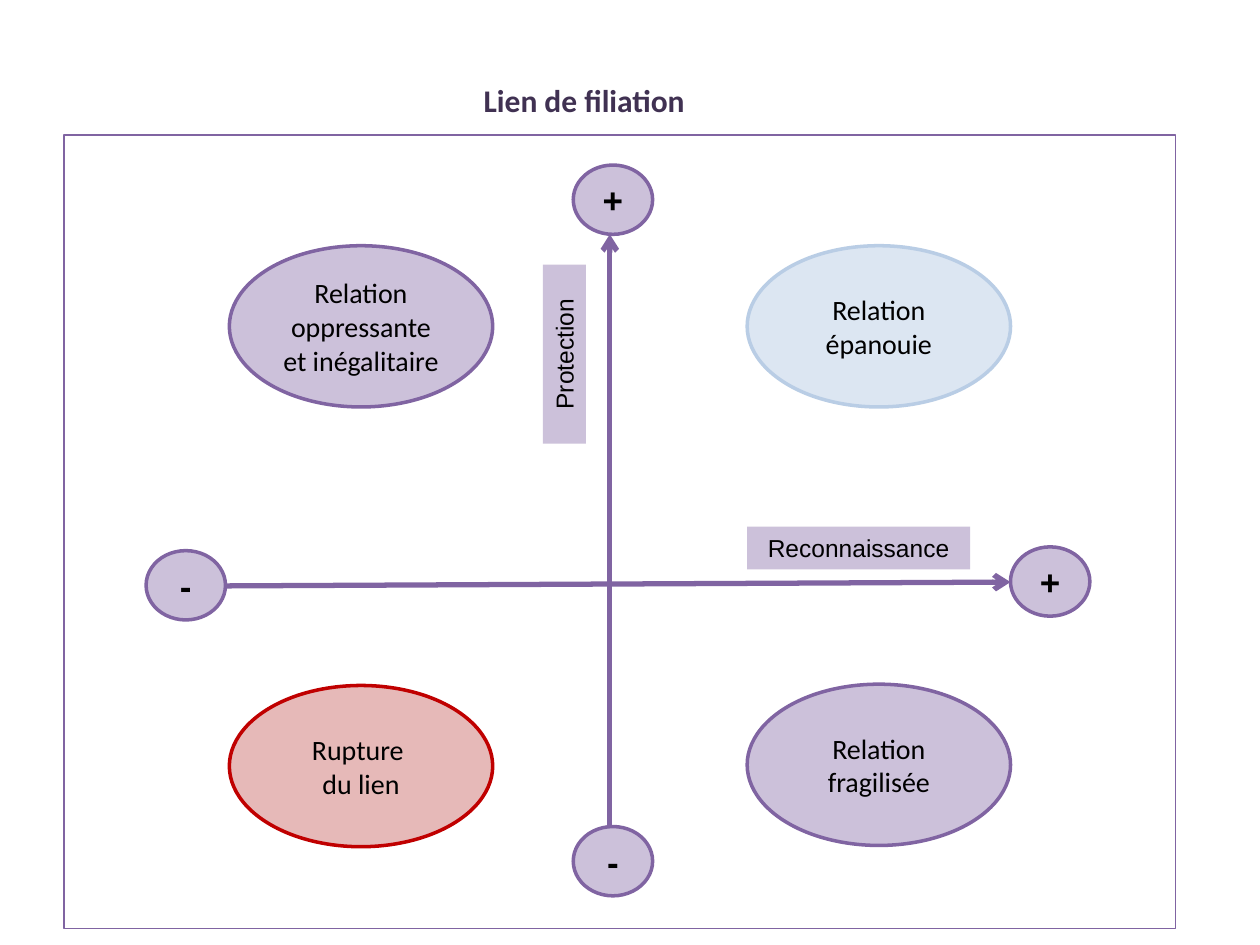
from lxml.etree import SubElement
from pptx import Presentation
from pptx.dml.color import RGBColor
from pptx.enum.shapes import MSO_CONNECTOR, MSO_SHAPE
from pptx.enum.text import MSO_ANCHOR, MSO_AUTO_SIZE, PP_ALIGN
from pptx.oxml.ns import qn
from pptx.util import Inches, Pt

HUES = {
    "ink": "000000", "title": "403152", "edge": "8064A2", "lilac": "CCC1DA",
    "sky": "DCE6F2", "blue": "B9CDE5", "rose": "E6B9B8", "red": "C00000",
}


def color(name):
    return RGBColor.from_string(HUES[name])


def write(shape, text, size=16, font="Calibri", hue="ink", bold=False,
          align=PP_ALIGN.CENTER, anchor=MSO_ANCHOR.MIDDLE, wrap=True, grow=False):
    frame = shape.text_frame
    frame.text = text
    frame.word_wrap = wrap
    frame.vertical_anchor = anchor
    frame.auto_size = MSO_AUTO_SIZE.SHAPE_TO_FIT_TEXT if grow else MSO_AUTO_SIZE.NONE
    for para in frame.paragraphs:
        para.alignment = align
        for run in para.runs:
            run.font.size = Pt(size)
            run.font.name = font
            run.font.bold = bold
            run.font.color.rgb = color(hue)


class Board:
    """Draws styled elements on the current slide."""

    def __init__(self, slide):
        self.shapes = slide.shapes
        self.edge = "edge"
        self.fill = "lilac"

    def shape(self, kind, box, fill=None, line=None, width=2):
        item = self.shapes.add_shape(kind, *map(Inches, box))
        item.shadow.inherit = False
        if fill:
            item.fill.solid()
            item.fill.fore_color.rgb = color(fill)
        else:
            item.fill.background()
        if line:
            item.line.color.rgb = color(line)
            item.line.width = Pt(width)
        else:
            item.line.fill.background()
        return item

    def axis(self, start, end):
        item = self.shapes.add_connector(
            MSO_CONNECTOR.STRAIGHT, *map(Inches, start + end))
        item.line.color.rgb = color(self.edge)
        item.line.width = Pt(3)
        SubElement(item.line._get_or_add_ln(), qn("a:tailEnd"), type="arrow")
        SubElement(item._element.spPr, qn("a:effectLst"))

    def label(self, text, box, turn=0):
        item = self.shape(MSO_SHAPE.RECTANGLE, box, self.fill)
        item.rotation = turn
        write(item, text, size=14, font="Arial", anchor=MSO_ANCHOR.TOP, grow=True)

    def sign(self, text, left, top):
        item = self.shape(MSO_SHAPE.OVAL, (left, top, 0.63, 0.55), self.fill, self.edge)
        write(item, text, size=20, font="Arial", bold=True)

    def bubble(self, text, left, top, fill=None, line=None):
        item = self.shape(MSO_SHAPE.OVAL, (left, top, 2.09, 1.28),
                          fill or self.fill, line or self.edge)
        write(item, text)

    def title(self, text, box):
        item = self.shapes.add_textbox(*map(Inches, box))
        write(item, text, size=18, hue="title", bold=True, align=PP_ALIGN.LEFT,
              anchor=MSO_ANCHOR.TOP, wrap=False, grow=True)

    def frame(self, box):
        self.shape(MSO_SHAPE.RECTANGLE, box, line=self.edge, width=1)


def main():
    deck = Presentation()
    deck.slide_width, deck.slide_height = Inches(10), Inches(7.5)
    board = Board(deck.slides.add_slide(deck.slide_layouts[6]))

    board.axis((1.79, 4.65), (8.02, 4.62))
    board.axis((4.84, 6.56), (4.84, 1.86))
    board.label("Protection", (3.77, 2.64, 1.42, 0.34), turn=270)
    board.label("Reconnaissance", (5.93, 4.18, 1.77, 0.34))

    for text, left, top in (("+", 8.02, 4.34), ("-", 1.16, 4.37),
                            ("-", 4.55, 6.56), ("+", 4.55, 1.31)):
        board.sign(text, left, top)

    west, east, north, south = 1.82, 5.93, 1.95, 5.43
    board.bubble("Relation fragilisée", east, south)
    board.bubble("Relation épanouie", east, north, "sky", "blue")
    board.bubble("Relation oppressante et inégalitaire", west, north)
    board.bubble("Rupture \ndu lien", west, south + 0.01, "rose", "red")

    board.title("Lien de filiation", (3.74, 0.59, 1.81, 0.4))
    board.frame((0.51, 1.07, 8.82, 6.3))
    deck.save("out.pptx")


if __name__ == "__main__":
    main()
